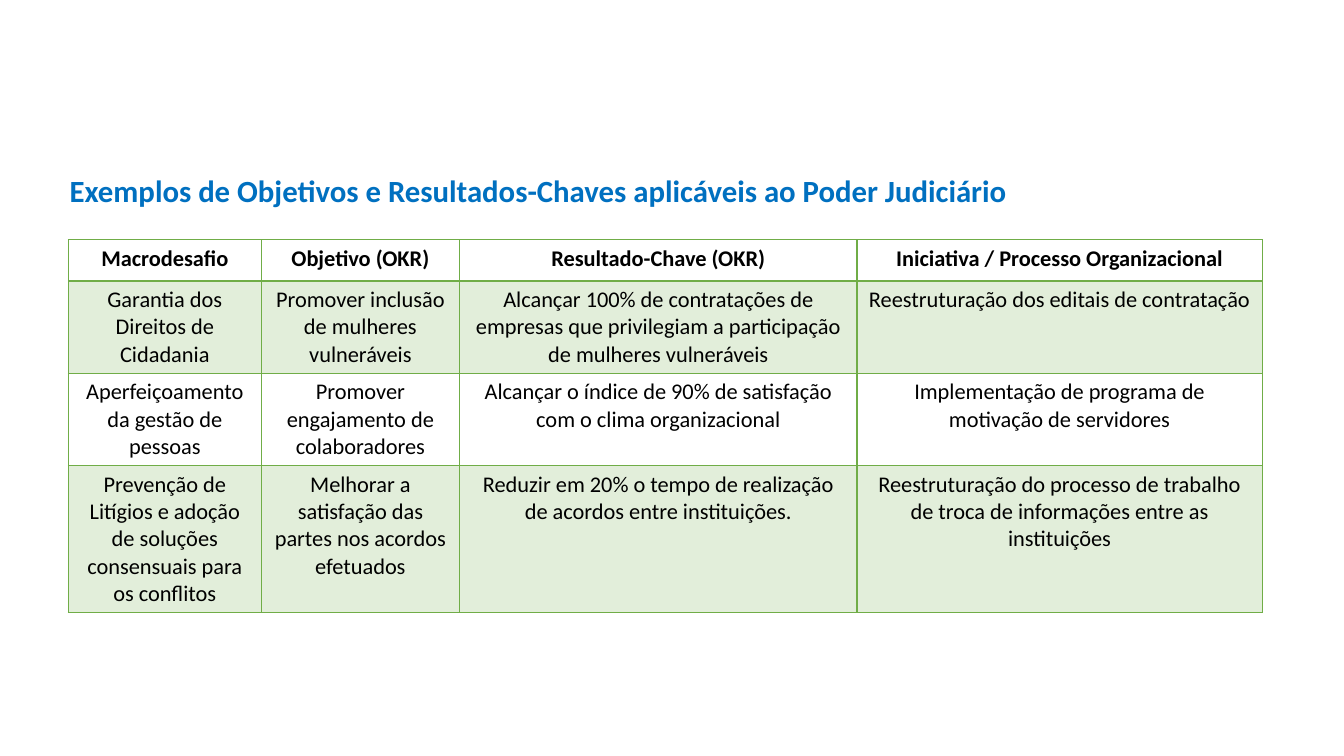
from pptx import Presentation
from pptx.util import Inches, Pt
from pptx.dml.color import RGBColor
from pptx.enum.text import PP_ALIGN, MSO_ANCHOR, MSO_AUTO_SIZE
from lxml.etree import SubElement
from pptx.oxml.ns import qn

GREEN = "70AD47"


def style(par, size, color, bold):
    for run in par.runs:
        run.font.name = "Calibri"
        run.font.size = Pt(size)
        run.font.bold = bold
        run.font.color.rgb = RGBColor.from_string(color)


def border(cell, side, width):
    line = SubElement(cell._tc.get_or_add_tcPr(), qn("a:ln" + side), w=str(Pt(width)))
    fill = SubElement(line, qn("a:solidFill"))
    SubElement(fill, qn("a:srgbClr"), val=GREEN)


deck = Presentation()
deck.slide_width = Inches(13.33)
deck.slide_height = Inches(7.5)
slide = deck.slides.add_slide(deck.slide_layouts[5])

title = slide.shapes.title
title.left, title.top = Inches(0.59), Inches(1.7)
title.width, title.height = Inches(12.16), Inches(0.68)
frame = title.text_frame
frame.text = "Exemplos de Objetivos e Resultados-Chaves aplicáveis ao Poder Judiciário"
frame.word_wrap = True
frame.auto_size = MSO_AUTO_SIZE.NONE
frame.vertical_anchor = MSO_ANCHOR.TOP
head = frame.paragraphs[0]
head.alignment = PP_ALIGN.LEFT
head.line_spacing = 0.9
style(head, 22, "0070C0", True)

rows = [
    ["Macrodesafio", "Objetivo (OKR)", "Resultado-Chave (OKR)",
     "Iniciativa / Processo Organizacional"],
    ["Garantia dos Direitos de Cidadania",
     "Promover inclusão de mulheres vulneráveis",
     "Alcançar 100% de contratações de empresas que privilegiam a participação de mulheres vulneráveis",
     "Reestruturação dos editais de contratação"],
    ["Aperfeiçoamento da gestão de pessoas",
     "Promover engajamento de colaboradores",
     "Alcançar o índice de 90% de satisfação com o clima organizacional",
     "Implementação de programa de motivação de servidores"],
    ["Prevenção de Litígios e adoção de soluções consensuais para os conflitos",
     "Melhorar a satisfação das partes nos acordos efetuados",
     "Reduzir em 20% o tempo de realização de acordos entre instituições.",
     "Reestruturação do processo de trabalho de troca de informações entre as instituições"],
]
widths = [1.91, 1.97, 3.94, 4.02]
table = slide.shapes.add_table(
    len(rows), len(widths), Inches(0.68), Inches(2.38),
    Inches(sum(widths)), Inches(0.41 * len(rows))).table
for col, width in zip(table.columns, widths):
    col.width = Inches(width)

for r, row in enumerate(rows):
    for c, text in enumerate(row):
        cell = table.cell(r, c)
        cell.text_frame.text = text
        par = cell.text_frame.paragraphs[0]
        par.alignment = PP_ALIGN.CENTER
        style(par, 16, "000000", r == 0)
        for side in "LRTB":
            thick = (r, side) in [(0, "B"), (1, "T")]
            border(cell, side, 2 if thick else 1)
        if r % 2:
            cell.fill.solid()
            cell.fill.fore_color.rgb = RGBColor.from_string(GREEN)
            tint = cell._tc.tcPr.find(qn("a:solidFill"))[0]
            SubElement(tint, qn("a:alpha"), val="20000")
        else:
            cell.fill.background()

deck.save("out.pptx")
